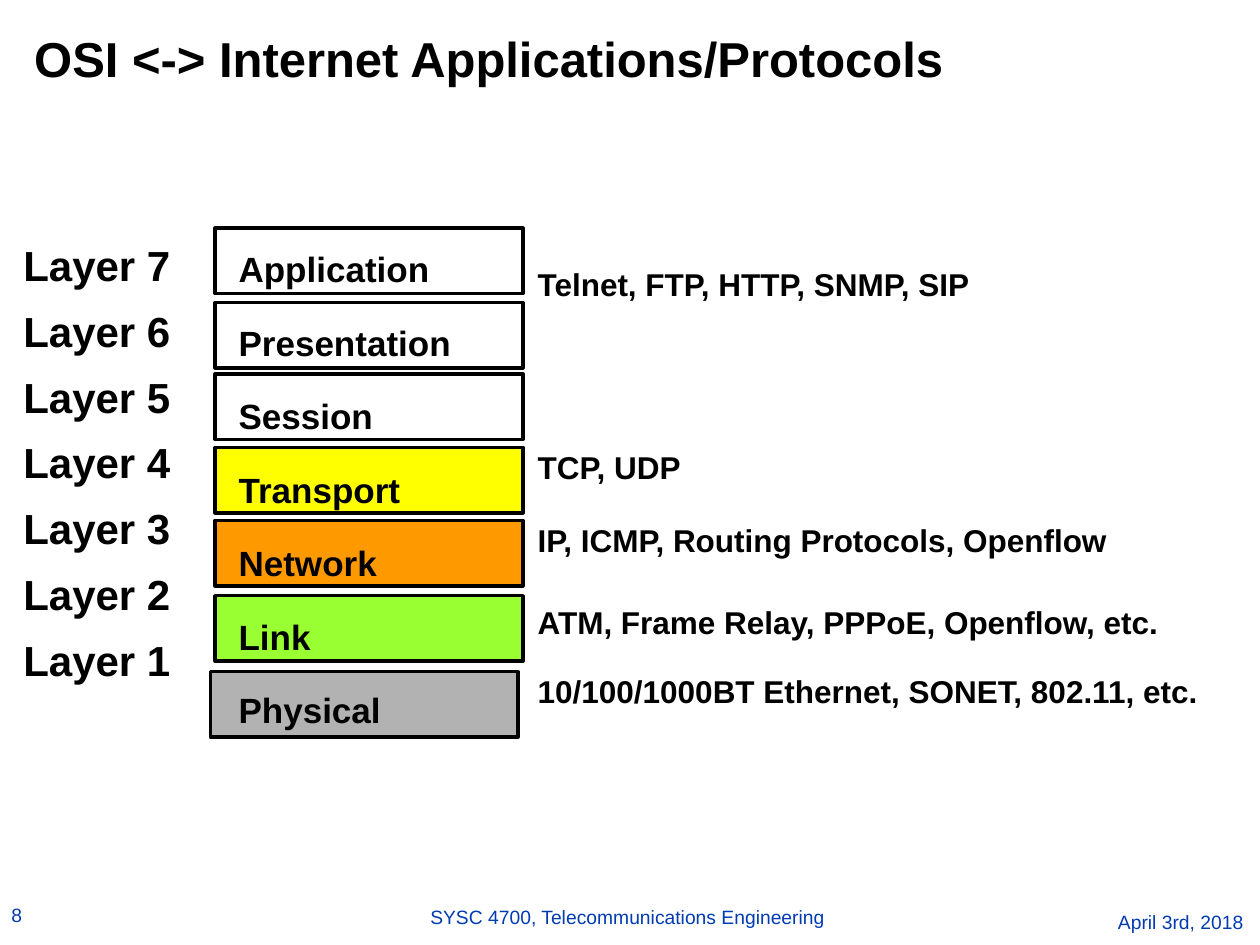
from pptx import Presentation
from pptx.dml.color import RGBColor as Rgb
from pptx.enum.shapes import MSO_SHAPE as Shape
from pptx.enum.text import MSO_ANCHOR as Anchor, PP_ALIGN as Align
from pptx.util import Cm, Pt

# Content
TITLE = "OSI <-> Internet Applications/Protocols"
BLACK, BLUE = "000000", "003BB2"

# Layer name, left and top of its bar (cm), fill
STACK = [
    ("Application", 4.34, 4.6, None),
    ("Presentation", 4.34, 6.1, None),
    ("Session", 4.34, 7.54, None),
    ("Transport", 4.34, 9.02, "FFFF00"),
    ("Network", 4.34, 10.49, "FF9900"),
    ("Link", 4.34, 12.01, "99FF33"),
    ("Physical", 4.24, 13.54, "B2B2B2"),
]
# Protocols, space before (pt)
PROTOCOLS = [
    ("Telnet, FTP, HTTP, SNMP, SIP", 0),
    ("TCP, UDP", 85.4),
    ("IP, ICMP, Routing Protocols, Openflow", 22.2),
    ("ATM, Frame Relay, PPPoE, Openflow, etc.", 27.9),
    ("10/100/1000BT Ethernet, SONET, 802.11, etc.", 20),
]
# Text, left, top, width, height (cm), alignment
FOOTER = [
    ("8", 0, 18.21, 6.78, 0.46, Align.LEFT),
    ("SYSC 4700, Telecommunications Engineering",
     8.39, 18.24, 8.53, 0.46, Align.CENTER),
    ("April 3rd, 2018", 18.52, 18.36, 6.78, 0.46, Align.RIGHT),
]


def color(code):
    return Rgb.from_string(code)


def inset(frame, side, edge):
    frame.margin_left = frame.margin_right = Cm(side)
    frame.margin_top = frame.margin_bottom = Cm(edge)


def write(para, text, size, code=BLACK, bold=True):
    run = para.add_run()
    run.text = text
    font = run.font
    font.name, font.size, font.bold = "Arial", Pt(size), bold
    font.color.rgb = color(code)


def column(slide, rows, place, size, line, left=0.66):
    """Stack (text, space before) rows with a hanging indent."""
    box = slide.shapes.add_textbox(*map(Cm, place))
    frame = box.text_frame
    frame.word_wrap = True
    inset(frame, 0.25, 0.13)
    for i, (text, gap) in enumerate(rows):
        para = frame.paragraphs[0] if i == 0 else frame.add_paragraph()
        props = para._p.get_or_add_pPr()
        props.set("marL", str(Cm(left)))
        props.set("indent", str(-Cm(0.66)))
        para.line_spacing = line
        para.space_before = Pt(gap if i else 0)
        write(para, text, size)


def main():
    deck = Presentation()
    deck.slide_width, deck.slide_height = Cm(25.4), Cm(19.05)
    slide = deck.slides.add_slide(deck.slide_layouts[5])

    # Title
    title = slide.shapes.title
    title.left, title.top = Cm(0.56), Cm(0.71)
    title.width, title.height = Cm(24.43), Cm(1.07)
    frame = title.text_frame
    frame.vertical_anchor = Anchor.BOTTOM
    inset(frame, 0.13, 0)
    para = frame.paragraphs[0]
    para.alignment, para.line_spacing = Align.LEFT, 0.89
    write(para, TITLE, 28)

    # Layer bars
    for _, left, top, fill in STACK:
        bar = slide.shapes.add_shape(
            Shape.RECTANGLE, Cm(left), Cm(top), Cm(6.2), Cm(1.32))
        bar.shadow.inherit = False
        if fill:
            bar.fill.solid()
            bar.fill.fore_color.rgb = color(fill)
        else:
            bar.fill.background()
        bar.line.color.rgb = color(BLACK)
        bar.line.width = Pt(2)

    # Text columns: layer names, layer numbers, protocols
    names = [(row[0], 18) for row in STACK]
    levels = [(f"Layer {n}", 12) for n in range(len(STACK), 0, -1)]
    column(slide, names, (4.46, 4.86, 5.92, 9.32), 20, 1.0, 0.76)
    column(slide, levels, (0.22, 4.82, 4.24, 9.48), 24, 0.89)
    column(slide, PROTOCOLS, (10.59, 5.31, 14.81, 10.54), 18, 0.89)

    # Footer
    for text, left, top, width, height, align in FOOTER:
        box = slide.shapes.add_textbox(
            Cm(left), Cm(top), Cm(width), Cm(height))
        frame = box.text_frame
        frame.word_wrap = True
        inset(frame, 0.23, 0)
        para = frame.paragraphs[0]
        para.alignment = align
        write(para, text, 11, BLUE, False)

    deck.save("out.pptx")


if __name__ == "__main__":
    main()
